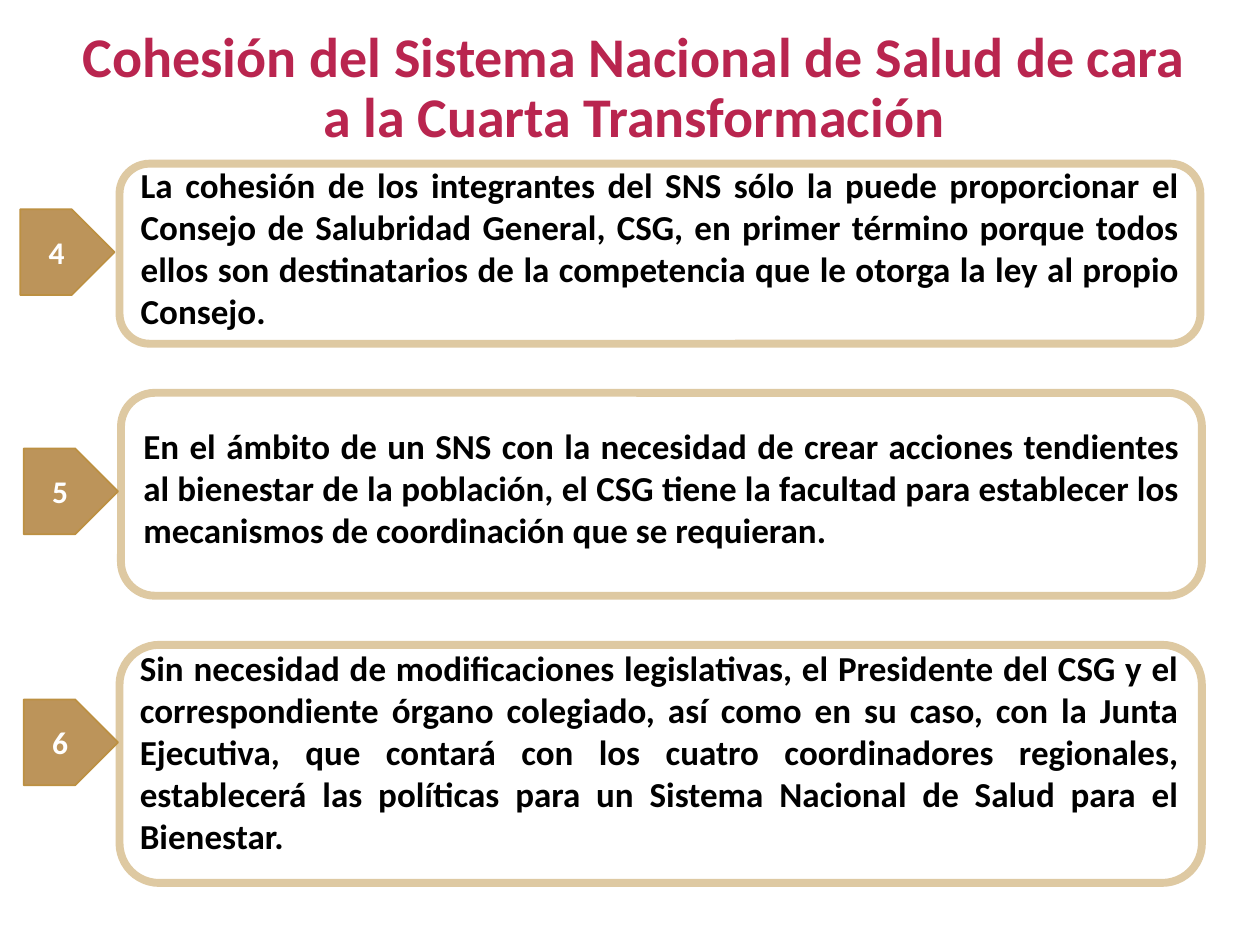
from pptx import Presentation
from pptx.dml.color import RGBColor
from pptx.enum.shapes import MSO_SHAPE
from pptx.enum.text import MSO_ANCHOR, PP_ALIGN
from pptx.util import Cm, Pt

ROUNDED = MSO_SHAPE.ROUNDED_RECTANGLE
PENTAGON = MSO_SHAPE.PENTAGON
TOP, MIDDLE = MSO_ANCHOR.TOP, MSO_ANCHOR.MIDDLE
CENTER, JUSTIFY = PP_ALIGN.CENTER, PP_ALIGN.JUSTIFY

CRIMSON = RGBColor(0xB9, 0x25, 0x4F)
SAND = RGBColor(0xDE, 0xC9, 0xA2)
GOLD = RGBColor(0xBC, 0x94, 0x5A)
DARK_GOLD = RGBColor(0xBC, 0x90, 0x42)
BLACK = RGBColor(0, 0, 0)
WHITE = RGBColor(0xFF, 0xFF, 0xFF)

TITLE = "Cohesión del Sistema Nacional de Salud de cara a la Cuarta Transformación"

# Number, frame box, tag offset from the frame, statement (all lengths in cm)
POINTS = [
    ("4", (2.41, 3.3, 21.79, 3.63), (-2, 0.92),
     "La cohesión de los integrantes del SNS sólo la puede proporcionar el "
     "Consejo de Salubridad General, CSG, en primer término porque todos ellos "
     "son destinatarios de la competencia que le otorga la ley al propio Consejo."),
    ("5", (2.44, 7.92, 21.79, 4.09), (-1.96, 1.12),
     "En el ámbito de un SNS con la necesidad de crear acciones tendientes al "
     "bienestar de la población, el CSG tiene la facultad para establecer los "
     "mecanismos de coordinación que se requieran."),
]
LAST_POINT = (
    "6", (2.41, 13, 21.82, 4.8), (-1.93, 1.1),
    "Sin necesidad de modificaciones legislativas, el Presidente del CSG y el "
    "correspondiente órgano colegiado, así como en su caso, con la Junta "
    "Ejecutiva, que contará con los cuatro coordinadores regionales, establecerá "
    "las políticas para un Sistema Nacional de Salud para el Bienestar.")


def write(shape, text, size, color, align, anchor=MIDDLE):
    frame = shape.text_frame
    frame.text = text
    frame.word_wrap = True
    frame.vertical_anchor = anchor
    para = frame.paragraphs[0]
    para.alignment = align
    font = para.runs[0].font
    font.name, font.size, font.bold = "Calibri", Pt(size), True
    font.color.rgb = color
    return para


def add_outlined(page, kind, box, line_color, line_width):
    shape = page.shapes.add_shape(kind, *map(Cm, box))
    shape.shadow.inherit = False
    shape.fill.background()
    shape.line.color.rgb = line_color
    shape.line.width = Pt(line_width)
    return shape


def add_title(page, box):
    title = page.shapes.add_textbox(*map(Cm, box))
    write(title, TITLE, 32, CRIMSON, CENTER).line_spacing = 0.9


def add_frame_and_tag(page, number, box, tag_offset):
    # Rounded frame
    frame = add_outlined(page, ROUNDED, box, SAND, 4.5)
    # Numbered tag pointing at the frame
    left, top = box[0] + tag_offset[0], box[1] + tag_offset[1]
    tag = add_outlined(page, PENTAGON, (left, top, 1.9, 1.73), DARK_GOLD, 1)
    tag.fill.solid()
    tag.fill.fore_color.rgb = GOLD
    write(tag, number, 18, WHITE, CENTER)
    return frame


def add_point(page, number, box, tag_offset, statement):
    frame = add_frame_and_tag(page, number, box, tag_offset)
    write(frame, statement, 20, BLACK, JUSTIFY)
    # Raises the statement slightly above the middle
    frame.text_frame.margin_bottom = Cm(0.38)


def add_long_point(page, number, box, tag_offset, statement):
    add_frame_and_tag(page, number, box, tag_offset)
    # The long statement starts at the upper edge of the frame
    left, top, width, height = box
    text_box = (left + 0.16, top - 0.1, width - 0.38, height + 0.51)
    label = page.shapes.add_textbox(*map(Cm, text_box))
    write(label, statement, 20, BLACK, JUSTIFY, TOP)


def main():
    deck = Presentation()
    deck.slide_width, deck.slide_height = Cm(25.4), Cm(19.05)
    page = deck.slides.add_slide(deck.slide_layouts[6])
    add_title(page, (1.37, 0.66, 22.83, 2.29))
    for point in POINTS:
        add_point(page, *point)
    add_long_point(page, *LAST_POINT)
    deck.save("out.pptx")


if __name__ == "__main__":
    main()
